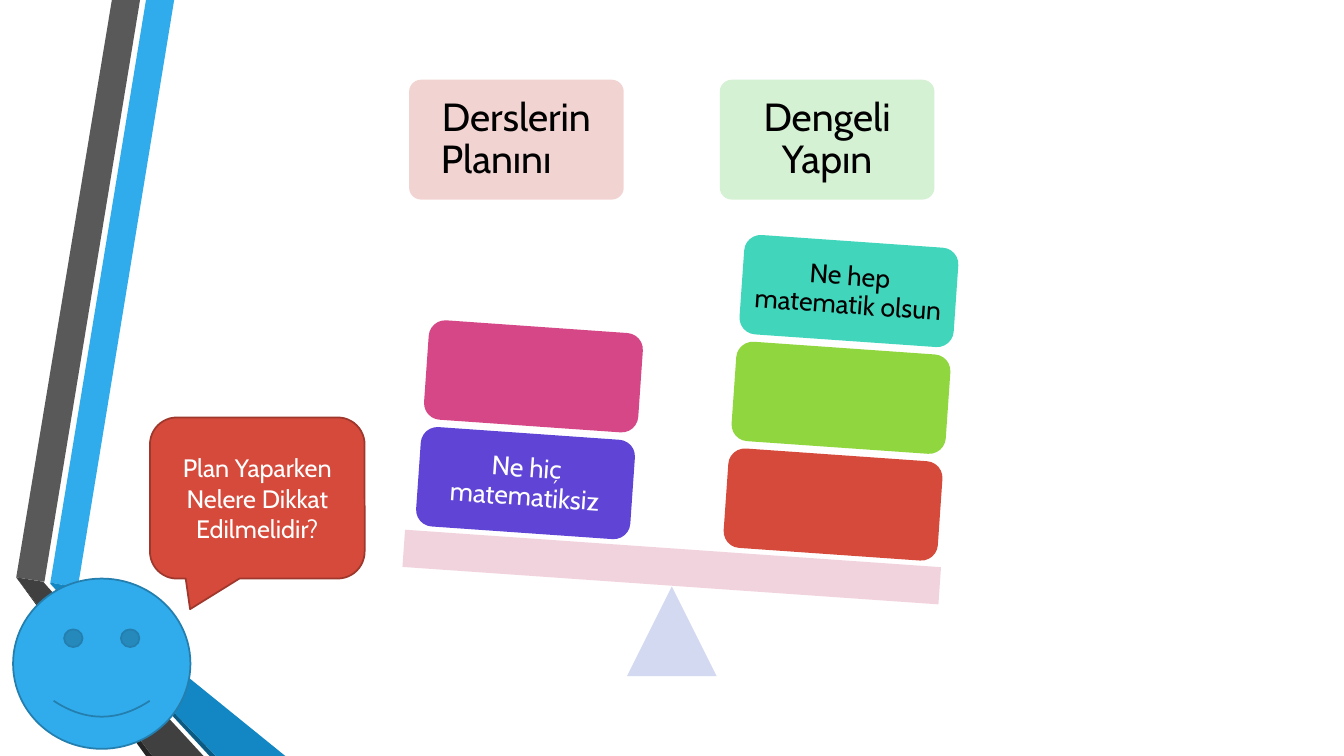
import dataclasses

import lxml.etree
import pptx
import pptx.dml.color
import pptx.enum.shapes
import pptx.enum.text
import pptx.oxml.ns
import pptx.util

Cm = pptx.util.Cm
SHAPE = pptx.enum.shapes.MSO_SHAPE


@dataclasses.dataclass(frozen=True)
class Theme:
    """Colours, font and type sizes of the slide."""
    font: str = "Cabin"
    label_size: int = 28
    tile_size: int = 19
    callout_size: int = 18
    black: str = "000000"
    white: str = "FFFFFF"
    blue: str = "30ACEC"
    blue_line: str = "247FAF"
    blue_fold: str = "1287C3"
    blue_edge: str = "0C5A82"
    grey: str = "595959"
    grey_fold: str = "404040"
    grey_edge: str = "262626"
    red: str = "D64A3B"
    red_line: str = "9E372C"
    green: str = "90D63E"
    teal: str = "41D6BC"
    violet: str = "6044D6"
    magenta: str = "D64787"
    pale_red: str = "F0D0CE"
    pale_green: str = "D1F0CF"
    pale_blue: str = "CFD5F0"
    pale_pink: str = "F0CFDA"


@dataclasses.dataclass(frozen=True)
class Box:
    """A rectangle in centimetres."""
    left: float
    top: float
    width: float
    height: float

    def inner(self, left, top, width, height):
        """Return a box placed relative to this one."""
        return Box(self.left + left, self.top + top, width, height)


THEME = Theme()


def rgb(value):
    """Return the colour object of a hex value."""
    return pptx.dml.color.RGBColor.from_string(value)


def paint(shape, fill, line=None, opacity=100):
    """Set fill, outline and opacity, and drop the shadow."""
    shape.shadow.inherit = False
    shape.fill.solid()
    shape.fill.fore_color.rgb = rgb(fill)
    if opacity < 100:
        tag = pptx.oxml.ns.qn("a:srgbClr")
        color = next(shape.fill._xPr.iter(tag))
        alpha = lxml.etree.SubElement(color, pptx.oxml.ns.qn("a:alpha"))
        alpha.set("val", str(opacity * 1000))
    if line:
        shape.line.color.rgb = rgb(line)
        shape.line.width = pptx.util.Pt(1.25)
    else:
        shape.line.fill.background()


def add_preset(page, kind, box, fill, line=None, opacity=100, turn=0):
    """Add a painted preset shape."""
    shape = page.shapes.add_shape(
        kind, Cm(box.left), Cm(box.top), Cm(box.width), Cm(box.height))
    shape.rotation = turn
    paint(shape, fill, line, opacity)
    return shape


def write(shape, text, size, color, inset=None, spacing=None):
    """Write one centred paragraph in a shape."""
    frame = shape.text_frame
    frame.word_wrap = True
    frame.vertical_anchor = pptx.enum.text.MSO_ANCHOR.MIDDLE
    if inset is not None:
        frame.margin_left = frame.margin_right = Cm(inset)
        frame.margin_top = frame.margin_bottom = Cm(inset)
    para = frame.paragraphs[0]
    para.text = text
    para.alignment = pptx.enum.text.PP_ALIGN.CENTER
    para.line_spacing = spacing
    para.font.name = THEME.font
    para.font.size = pptx.util.Pt(size)
    para.font.color.rgb = rgb(color)


def add_ribbons(page, box):
    """Draw the two folded ribbons along the left edge."""
    bottom = box.height
    pieces = [
        (THEME.blue, [(1.27, 14.68), (1.96, 14.81), (4.39, 0), (3.68, 0)]),
        (THEME.grey, [(3.53, 0), (2.82, 0), (0.41, 14.55), (1.12, 14.66)]),
        (THEME.grey_edge, [(0.41, 14.55), (3.68, bottom), (3.84, bottom)]),
        (THEME.blue_edge, [(1.27, 14.71), (5.28, bottom), (5.44, bottom)]),
        (THEME.blue_fold, [(1.27, 14.68), (1.27, 14.71), (5.44, bottom),
                           (7.19, bottom), (1.96, 14.81)]),
        (THEME.grey_fold, [(5.13, bottom), (1.22, 14.81), (1.09, 14.66),
                           (0.41, 14.55), (3.84, bottom)]),
    ]
    for color, corners in pieces:
        points = [(Cm(box.left + x), Cm(box.top + y)) for x, y in corners]
        outline = page.shapes.build_freeform(*points[0])
        outline.add_line_segments(points[1:], close=True)
        paint(outline.convert_to_shape(), color)


def add_speaker(page, box):
    """Draw the smiling face and its speech bubble."""
    add_preset(page, SHAPE.SMILEY_FACE, box.inner(0, 4.06, 4.47, 4.29),
               THEME.blue, THEME.blue_line)
    bubble = add_preset(page, SHAPE.ROUNDED_RECTANGULAR_CALLOUT,
                        box.inner(3.45, 0, 5.41, 4.06),
                        THEME.red, THEME.red_line)
    for index, value in enumerate((-0.313, 0.69, 0.167)):
        bubble.adjustments[index] = value
    write(bubble, "Plan Yaparken Nelere Dikkat Edilmelidir?",
          THEME.callout_size, THEME.white)


def add_stack(page, box, tiles, tilt):
    """Pile tilted tiles upwards from the given bottom tile box."""
    for level, (fill, text, color) in enumerate(tiles):
        place = box.inner(0.2 * level, -2.69 * level, box.width, box.height)
        tile = add_preset(page, SHAPE.ROUNDED_RECTANGLE, place, fill,
                          turn=tilt)
        if text:
            write(tile, text, THEME.tile_size, color, 0.2, 0.9)


def add_balance(page, box):
    """Draw the two headings and the tilted scale with its stacks."""
    tilt = 4
    labels = [(0.15, "Derslerin Planını\t", THEME.pale_red),
              (7.98, "Dengeli Yapın", THEME.pale_green)]
    for left, text, fill in labels:
        label = add_preset(page, SHAPE.ROUNDED_RECTANGLE,
                           box.inner(left, 0, 5.41, 3.02), fill, opacity=90)
        label.adjustments[0] = 0.1
        write(label, text, THEME.label_size, THEME.black, 0.3, 0.9)
    pivot = 2.26
    add_preset(page, SHAPE.ISOSCELES_TRIANGLE,
               box.inner((box.width - pivot) / 2, box.height - pivot,
                         pivot, pivot), THEME.pale_blue, opacity=90)
    add_preset(page, SHAPE.RECTANGLE, box.inner(0, 11.81, box.width, 0.94),
               THEME.pale_pink, opacity=90, turn=tilt)
    add_stack(page, box.inner(8.13, 9.45, 5.41, 2.51), [
        (THEME.red, "", None),
        (THEME.green, "", None),
        (THEME.teal, "Ne hep matematik olsun", THEME.black)], tilt)
    add_stack(page, box.inner(0.38, 8.91, 5.41, 2.51), [
        (THEME.violet, "Ne hiç matematiksiz", THEME.white),
        (THEME.magenta, "", None)], tilt)


def main():
    """Build and save the deck."""
    deck = pptx.Presentation()
    deck.slide_width, deck.slide_height = Cm(33.87), Cm(19.05)
    page = deck.slides.add_slide(deck.slide_layouts[6])
    add_ribbons(page, Box(0, 0, 7.19, 19.05))
    add_speaker(page, Box(0.33, 10.52, 8.86, 8.35))
    add_balance(page, Box(10.16, 2.01, 13.54, 15.03))
    deck.save("out.pptx")


if __name__ == "__main__":
    main()
